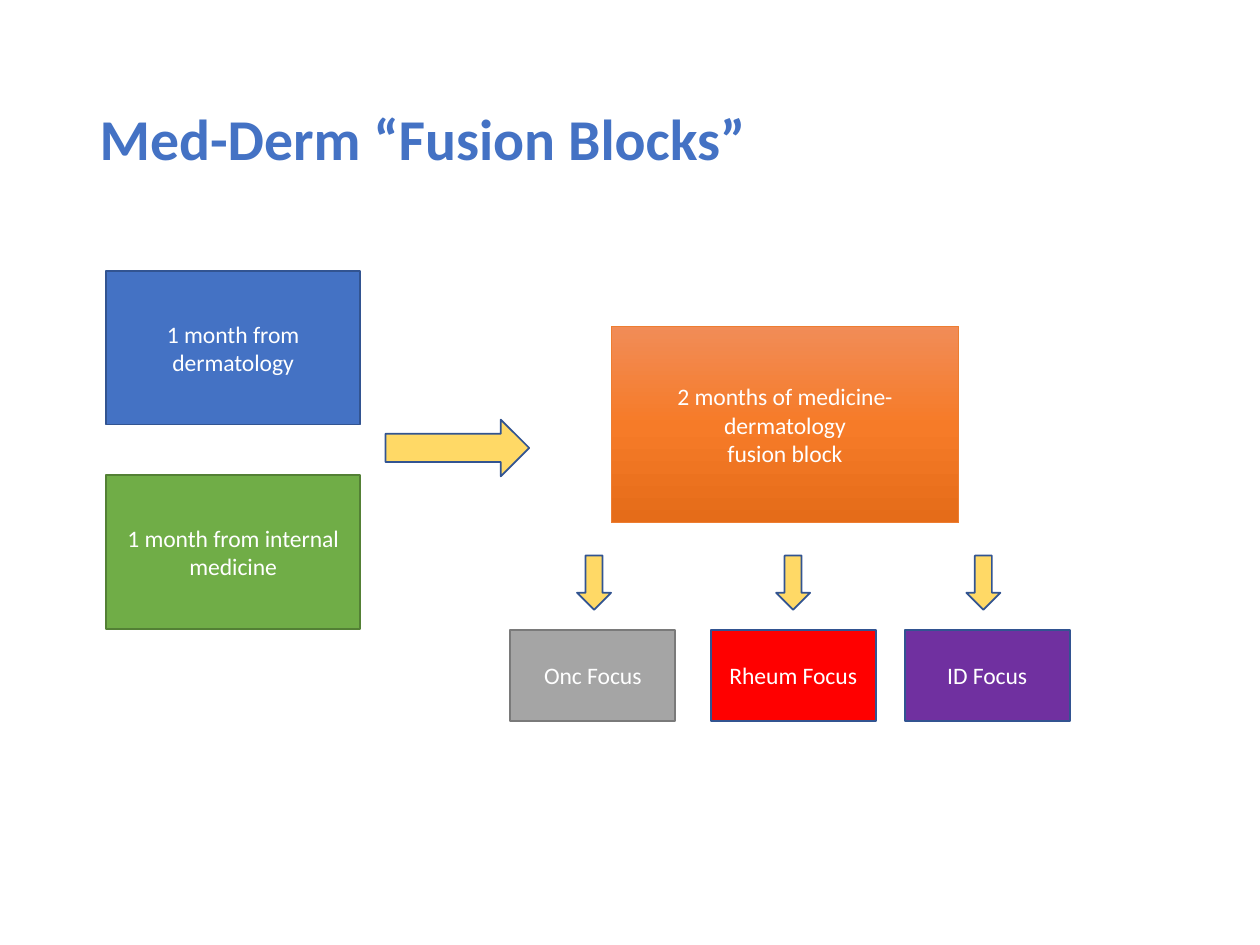
from copy import deepcopy
from dataclasses import dataclass

from pptx import Presentation
from pptx.dml.color import RGBColor
from pptx.enum.shapes import MSO_SHAPE
from pptx.enum.text import MSO_ANCHOR, MSO_AUTO_SIZE, PP_ALIGN
from pptx.oxml.ns import qn
from pptx.util import Inches, Pt


@dataclass(frozen=True)
class Theme:
    """Colours, font and type sizes of the slide."""
    font: str = "Calibri"
    title_size: float = 33
    label_size: float = 13.5
    white: str = "FFFFFF"
    blue: str = "4472C4"
    outline: str = "325491"
    green: str = "70AD47"
    green_outline: str = "538035"
    yellow: str = "FFD966"
    orange: str = "ED7D31"
    orange_blend: tuple = ("F18C57", "F67B28", "E56C19")
    gray: str = "A5A5A5"
    gray_outline: str = "7A7A7A"
    red: str = "FF0000"
    purple: str = "7030A0"


def write_text(frame, text, *, font, size, color, bold=False, align=PP_ALIGN.CENTER, line_spacing=None):
    """Fill a text frame, one paragraph for each line of text."""
    frame.word_wrap = True
    frame.auto_size = MSO_AUTO_SIZE.NONE
    frame.vertical_anchor = MSO_ANCHOR.MIDDLE
    frame.text = text
    for paragraph in frame.paragraphs:
        paragraph.alignment = align
        paragraph.line_spacing = line_spacing
        for run in paragraph.runs:
            run.font.name = font
            run.font.size = Pt(size)
            run.font.bold = bold
            run.font.color.rgb = RGBColor.from_string(color)


class SlideBuilder:
    """Places styled elements on a grid of 100 columns by 75 rows."""

    def __init__(self, presentation, theme):
        """Add a title-only slide to the presentation."""
        self.theme = theme
        self.column = presentation.slide_width / 100
        self.row = presentation.slide_height / 75
        self.slide = presentation.slides.add_slide(presentation.slide_layouts[5])

    def place(self, left, top, width, height):
        """Turn columns and rows into slide lengths."""
        return (round(left * self.column), round(top * self.row),
                round(width * self.column), round(height * self.row))

    def title(self, text, *area):
        """Move and format the title placeholder."""
        shape = self.slide.shapes.title
        shape.left, shape.top, shape.width, shape.height = self.place(*area)
        write_text(shape.text_frame, text, font=self.theme.font, size=self.theme.title_size,
                   color=self.theme.blue, bold=True, align=PP_ALIGN.LEFT, line_spacing=0.9)

    def preset(self, kind, area, fill, outline, line_width=1):
        """Add a flat preset shape with a fill and an outline."""
        shape = self.slide.shapes.add_shape(kind, *self.place(*area))
        shape.shadow.inherit = False
        shape.fill.solid()
        shape.fill.fore_color.rgb = RGBColor.from_string(fill)
        shape.line.color.rgb = RGBColor.from_string(outline)
        shape.line.width = Pt(line_width)
        return shape

    def block(self, text, area, fill, outline, line_width=1):
        """Add a labelled rectangle."""
        shape = self.preset(MSO_SHAPE.RECTANGLE, area, fill, outline, line_width)
        write_text(shape.text_frame, text, font=self.theme.font,
                   size=self.theme.label_size, color=self.theme.white)
        return shape

    def blended_block(self, text, area, colors, outline):
        """Add a labelled rectangle with an even top-to-bottom gradient."""
        shape = self.block(text, area, colors[0], outline, 0.5)
        shape.fill.gradient()
        shape.fill.gradient_angle = 270
        stop_list = shape.element.spPr.find(qn("a:gradFill")).find(qn("a:gsLst"))
        stop_list.insert(1, deepcopy(stop_list[0]))
        for index, (stop, color) in enumerate(zip(shape.fill.gradient_stops, colors)):
            stop.color.rgb = RGBColor.from_string(color)
            stop.position = index / (len(colors) - 1)

    def arrow(self, kind, *area):
        """Add a yellow block arrow."""
        self.preset(kind, area, self.theme.yellow, self.theme.outline)


def main():
    """Build the fusion block slide."""
    theme = Theme()
    presentation = Presentation()
    presentation.slide_width, presentation.slide_height = Inches(10), Inches(7.5)
    builder = SlideBuilder(presentation, theme)

    builder.title("Med-Derm “Fusion Blocks”", 6.9, 4, 86.2, 14.5)

    sources = (
        ("1 month from dermatology", theme.blue, theme.outline),
        ("1 month from internal medicine", theme.green, theme.green_outline),
    )
    for index, (text, fill, outline) in enumerate(sources):
        builder.block(text, (8.4, 21.5 + 16.2 * index, 20.2, 12.2), fill, outline)

    builder.arrow(MSO_SHAPE.RIGHT_ARROW, 30.6, 33.3, 11.4, 4.5)
    builder.blended_block("2 months of medicine-dermatology\nfusion block",
                          (48.5, 25.9, 27.6, 15.6), theme.orange_blend, theme.orange)

    focuses = (
        ("Onc Focus", 40.5, 45.8, theme.gray, theme.gray_outline),
        ("Rheum Focus", 56.4, 61.6, theme.red, theme.outline),
        ("ID Focus", 71.8, 76.7, theme.purple, theme.outline),
    )
    for text, left, arrow_left, fill, outline in focuses:
        builder.arrow(MSO_SHAPE.DOWN_ARROW, arrow_left, 44.1, 2.7, 4.3)
        builder.block(text, (left, 50, 13.1, 7.2), fill, outline)

    presentation.save("out.pptx")


if __name__ == "__main__":
    main()
